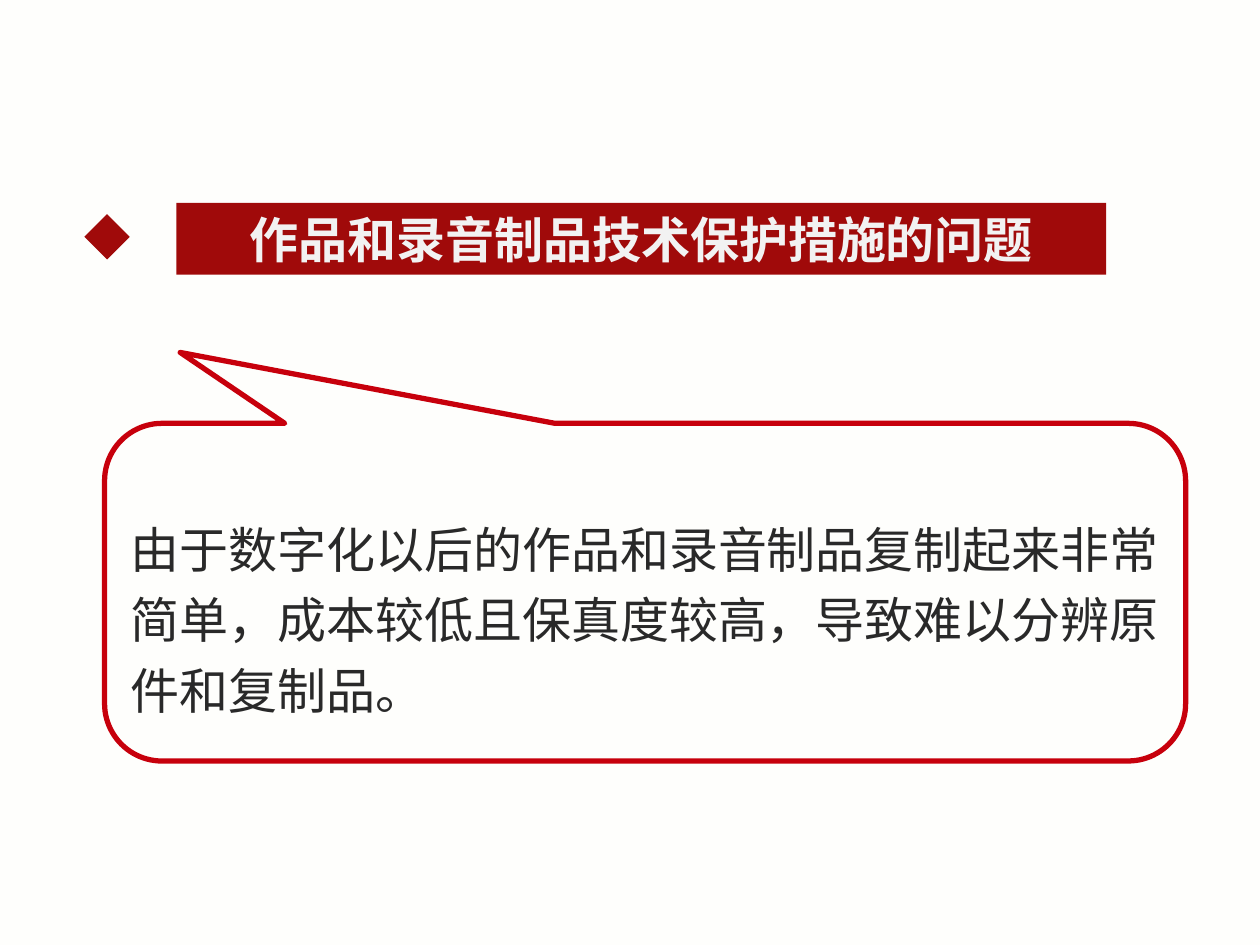
from dataclasses import dataclass, field
from typing import Any, Optional

from lxml.etree import SubElement
from pptx import Presentation
from pptx.dml.color import RGBColor
from pptx.enum.shapes import MSO_SHAPE
from pptx.enum.text import MSO_ANCHOR, MSO_AUTO_SIZE, PP_ALIGN
from pptx.oxml.ns import qn
from pptx.util import Inches, Pt

PAPER = RGBColor(0xFE, 0xFE, 0xFC)
CRIMSON = RGBColor(0xA0, 0x0A, 0x0A)
SCARLET = RGBColor(0xC7, 0x00, 0x0C)
PALE = RGBColor(0xF2, 0xF2, 0xF2)
INK = RGBColor(0x29, 0x29, 0x29)

FONT = "Noto Sans CJK SC"
COLUMNS, ROWS = 100, 75
SLIDE_WIDTH, SLIDE_HEIGHT = Inches(10), Inches(7.5)

FRAME_FORMAT = {
    "word_wrap": True,
    "auto_size": MSO_AUTO_SIZE.SHAPE_TO_FIT_TEXT,
    "vertical_anchor": MSO_ANCHOR.TOP,
    "margin_left": Inches(0.1),
    "margin_right": Inches(0.1),
    "margin_top": Inches(0.05),
    "margin_bottom": Inches(0.05),
}


@dataclass(frozen=True)
class Area:
    column: float
    row: float
    columns: float
    rows: float

    def box(self) -> tuple[int, int, int, int]:
        cell_width, cell_height = SLIDE_WIDTH / COLUMNS, SLIDE_HEIGHT / ROWS
        return (
            round(self.column * cell_width),
            round(self.row * cell_height),
            round(self.columns * cell_width),
            round(self.rows * cell_height),
        )


@dataclass(frozen=True)
class Wording:
    text: str
    color: RGBColor
    font: dict[str, Any]
    paragraph: dict[str, Any]


@dataclass(frozen=True)
class Part:
    area: Area
    preset: Optional[MSO_SHAPE] = None
    fill: Optional[RGBColor] = None
    line: Optional[RGBColor] = None
    adjustments: list[float] = field(default_factory=list)
    wording: Optional[Wording] = None


PARTS = [
    Part(
        Area(14, 16.1, 73.8, 5.7),
        MSO_SHAPE.RECTANGLE,
        fill=CRIMSON,
        wording=Wording(
            "作品和录音制品技术保护措施的问题",
            PALE,
            {"name": FONT, "size": Pt(28), "bold": True},
            {"alignment": PP_ALIGN.CENTER},
        ),
    ),
    Part(Area(6.7, 17, 3.6, 3.6), MSO_SHAPE.DIAMOND, fill=CRIMSON),
    Part(
        Area(8.3, 33.6, 85.8, 26.8),
        MSO_SHAPE.ROUNDED_RECTANGULAR_CALLOUT,
        line=SCARLET,
        adjustments=[-0.43, -0.71, 0.17],
    ),
    Part(
        Area(9.4, 39.8, 84.9, 18),
        wording=Wording(
            "由于数字化以后的作品和录音制品复制起来非常简单，"
            "成本较低且保真度较高，导致难以分辨原件和复制品。",
            INK,
            {"name": FONT, "size": Pt(28)},
            {"alignment": PP_ALIGN.LEFT, "line_spacing": 1.2},
        ),
    ),
]


def apply_format(target: Any, values: dict[str, Any]) -> None:
    for attribute, value in values.items():
        setattr(target, attribute, value)


def write_wording(frame: Any, wording: Wording) -> None:
    apply_format(frame, FRAME_FORMAT)
    paragraph = frame.paragraphs[0]
    apply_format(paragraph, wording.paragraph)
    run = paragraph.add_run()
    run.text = wording.text
    apply_format(run.font, wording.font)
    run.font.color.rgb = wording.color
    SubElement(run.font._element, qn("a:ea"), typeface=FONT)


def style_outline(shape: Any, part: Part) -> None:
    shape.shadow.inherit = False
    if part.fill is None:
        shape.fill.background()
    else:
        shape.fill.solid()
        shape.fill.fore_color.rgb = part.fill
    if part.line is None:
        shape.line.fill.background()
    else:
        shape.line.color.rgb = part.line
        shape.line.width = Pt(3)
    for index, value in enumerate(part.adjustments):
        shape.adjustments[index] = value


def draw_part(slide: Any, part: Part) -> None:
    if part.preset is None:
        shape = slide.shapes.add_textbox(*part.area.box())
    else:
        shape = slide.shapes.add_shape(part.preset, *part.area.box())
        style_outline(shape, part)
    if part.wording is not None:
        write_wording(shape.text_frame, part.wording)


def main() -> None:
    deck = Presentation()
    apply_format(deck, {"slide_width": SLIDE_WIDTH, "slide_height": SLIDE_HEIGHT})
    slide = deck.slides.add_slide(deck.slide_layouts[6])
    slide.background.fill.solid()
    slide.background.fill.fore_color.rgb = PAPER
    for part in PARTS:
        draw_part(slide, part)
    deck.save("out.pptx")


if __name__ == "__main__":
    main()
